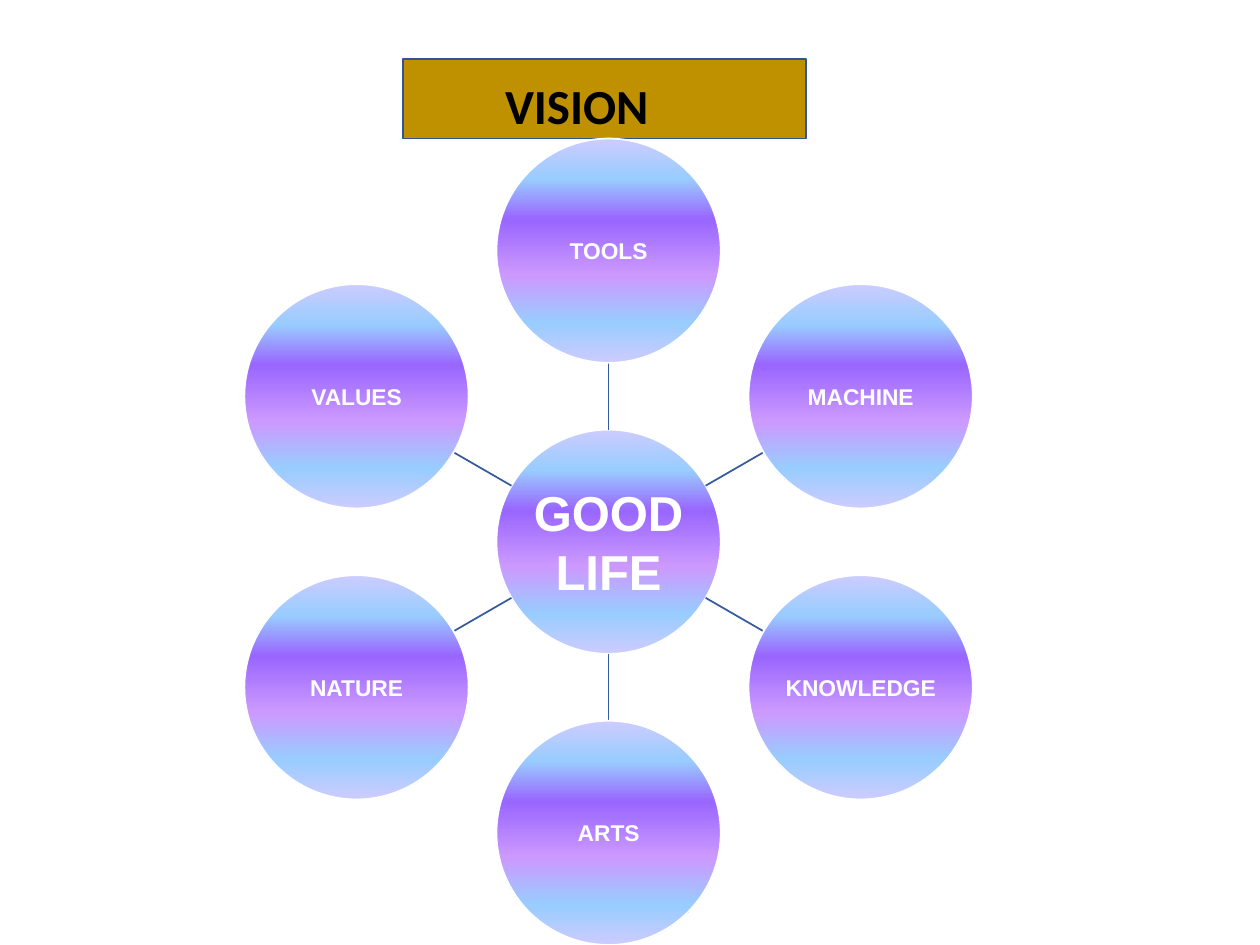
from math import cos, radians, sin

from lxml import etree
from pptx import Presentation
from pptx.dml.color import RGBColor
from pptx.enum.shapes import MSO_CONNECTOR, MSO_SHAPE
from pptx.enum.text import MSO_ANCHOR, PP_ALIGN
from pptx.oxml.ns import qn
from pptx.util import Inches, Pt

OVAL, RECTANGLE = MSO_SHAPE.OVAL, MSO_SHAPE.RECTANGLE
STRAIGHT = MSO_CONNECTOR.STRAIGHT
MIDDLE, CENTER = MSO_ANCHOR.MIDDLE, PP_ALIGN.CENTER

WHITE = RGBColor(0xFF, 0xFF, 0xFF)
BLACK = RGBColor(0x00, 0x00, 0x00)
GOLD = RGBColor(0xBF, 0x90, 0x00)
BANNER_EDGE = RGBColor(0x32, 0x54, 0x91)
SPOKE_BLUE = RGBColor(0x36, 0x5B, 0x9D)
LAVENDER = RGBColor(0xCC, 0xCC, 0xFF)
SKY = RGBColor(0x99, 0xCC, 0xFF)
VIOLET = RGBColor(0x99, 0x66, 0xFF)
ORCHID = RGBColor(0xCC, 0x99, 0xFF)
# Percent from top to bottom, and colour
GRADIENT = [(0, LAVENDER), (18, SKY), (36, VIOLET),
            (61, ORCHID), (82, SKY), (100, LAVENDER)]

# Wheel geometry in inches
SLIDE_W, SLIDE_H = 10, 7.5
HUB_X, HUB_Y = 4.83, 4.3
RADIUS, ORBIT = 0.89, 2.31
THEMES = ["TOOLS", "MACHINE", "KNOWLEDGE", "ARTS", "NATURE", "VALUES"]


def on_wheel(angle, distance):
    """Point at a clockwise angle from the top of the wheel."""
    turn = radians(angle)
    return HUB_X + distance * sin(turn), HUB_Y - distance * cos(turn)


def fill_gradient(fill):
    fill.gradient()
    fill.gradient_angle = 270
    stops = fill._xPr.find(qn("a:gradFill")).find(qn("a:gsLst"))
    for old_stop in list(stops):
        stops.remove(old_stop)
    for percent, color in GRADIENT:
        stop = etree.SubElement(stops, qn("a:gs"), pos=str(percent * 1000))
        etree.SubElement(stop, qn("a:srgbClr"), val=str(color))


def style_text(paragraph, text, font_name, size, color):
    paragraph.text = text
    font = paragraph.font
    font.name, font.size, font.bold = font_name, Pt(size), True
    font.color.rgb = color


def add_circle(slide, x, y, label, size, inset):
    circle = slide.shapes.add_shape(
        OVAL, Inches(x - RADIUS), Inches(y - RADIUS),
        Inches(2 * RADIUS), Inches(2 * RADIUS))
    circle.shadow.inherit = False
    fill_gradient(circle.fill)
    circle.line.color.rgb = WHITE
    circle.line.width = Pt(1)
    frame = circle.text_frame
    frame.word_wrap = True
    frame.vertical_anchor = MIDDLE
    frame.margin_left = frame.margin_right = Inches(inset)
    frame.margin_top = frame.margin_bottom = Inches(inset)
    label_line = frame.paragraphs[0]
    label_line.alignment = CENTER
    style_text(label_line, label, "Arial", size, WHITE)


def add_spoke(slide, angle):
    ends = on_wheel(angle, RADIUS) + on_wheel(angle, ORBIT - RADIUS)
    spoke = slide.shapes.add_connector(STRAIGHT, *map(Inches, ends))
    spoke.line.color.rgb = SPOKE_BLUE
    spoke.line.width = Pt(1)
    etree.SubElement(spoke._element.spPr, qn("a:effectLst"))


def add_banner(slide, title):
    banner = slide.shapes.add_shape(
        RECTANGLE, Inches(3.2), Inches(0.47), Inches(3.2), Inches(0.63))
    banner.shadow.inherit = False
    banner.fill.solid()
    banner.fill.fore_color.rgb = GOLD
    banner.line.color.rgb = BANNER_EDGE
    banner.line.width = Pt(1)

    heading = slide.shapes.add_textbox(
        Inches(3.91), Inches(0.55), Inches(2.09), Inches(0.57))
    heading.text_frame.word_wrap = True
    style_text(heading.text_frame.paragraphs[0], title, "Calibri", 28, BLACK)


def main():
    prs = Presentation()
    prs.slide_width, prs.slide_height = Inches(SLIDE_W), Inches(SLIDE_H)
    slide = prs.slides.add_slide(prs.slide_layouts[6])

    # Title
    add_banner(slide, "VISION")

    # Hub, then one spoke and circle for each theme
    add_circle(slide, HUB_X, HUB_Y, "GOOD LIFE", 28, 0.02)
    for index, theme in enumerate(THEMES):
        angle = index * 360 / len(THEMES)
        add_spoke(slide, angle)
        add_circle(slide, *on_wheel(angle, ORBIT), theme, 13, 0.01)

    prs.save("out.pptx")


if __name__ == "__main__":
    main()
